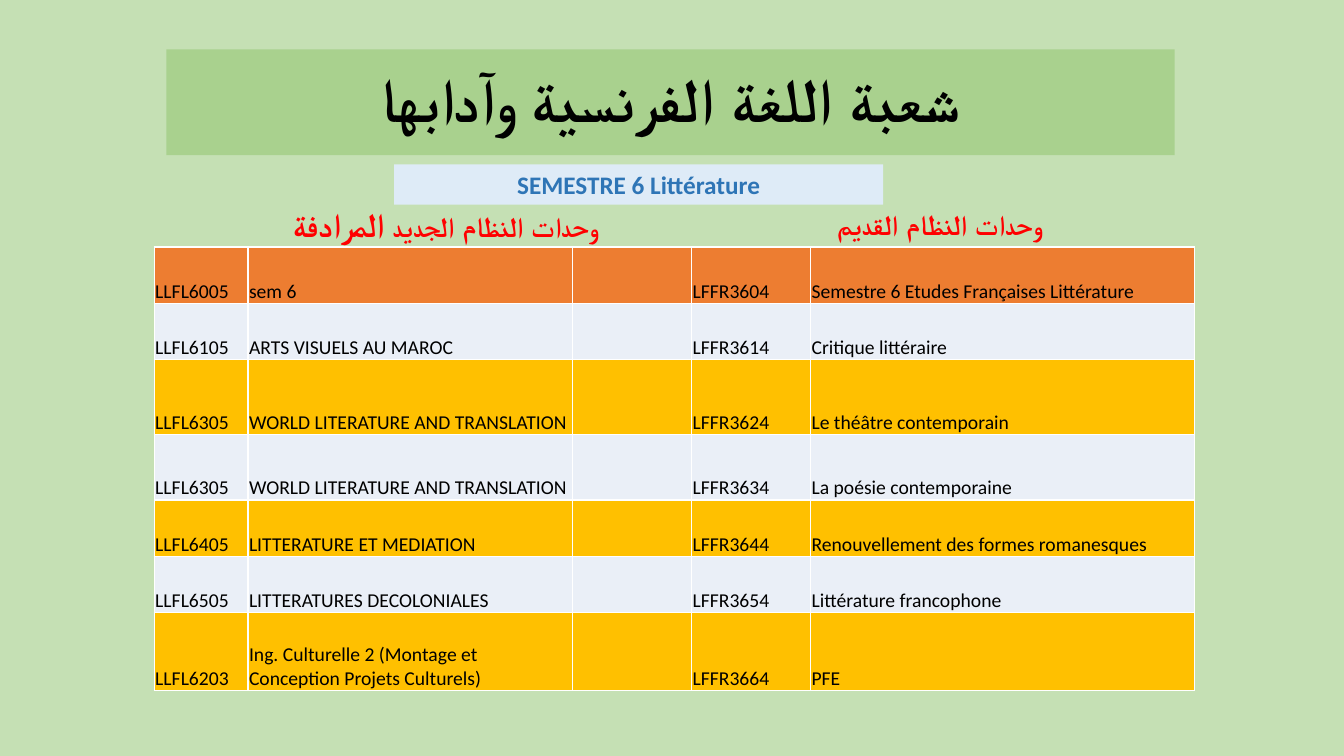
import pptx
import pptx.util
import pptx.dml.color
import pptx.enum.shapes
import pptx.enum.text
import lxml.etree
from pptx.util import Inches

COLORS = {
    "background": "C5E0B4", "banner": "A9D18E", "semester": "DEEBF7",
    "semester_text": "2E75B6", "heading": "FF0000", "text": "000000",
    "header_row": "ED7D31", "light_row": "EAEFF7", "gold_row": "FFC000",
    "border": "FFFFFF",
}


def rgb(name):
    return pptx.dml.color.RGBColor.from_string(COLORS[name])


def style_font(font, size, color, bold):
    for key, value in {"name": "Calibri", "size": pptx.util.Pt(size), "bold": bold}.items():
        setattr(font, key, value)
    font.color.rgb = rgb(color)


deck = pptx.Presentation()
deck.slide_width, deck.slide_height = Inches(13.33), Inches(7.5)
slide = deck.slides.add_slide(deck.slide_layouts[6])
slide.background.fill.solid()
slide.background.fill.fore_color.rgb = rgb("background")

# Title, column headings and semester label: place, fill, text colour, rtl, runs
labels = [
    ((1.65, 0.49, 10, 1.05), "banner", "text", True, [("شعبة اللغة الفرنسية وآدابها", 44)]),
    ((2.19, 1.97, 4.46, 0.5), None, "heading", True,
     [("وحدات النظام الجديد ", 20), ("المرادفة", 24)]),
    ((7.09, 2.01, 4.46, 0.44), None, "heading", True, [("وحدات النظام القديم", 20)]),
    ((3.91, 1.63, 4.85, 0.4), "semester", "semester_text", False,
     [("SEMESTRE 6 Littérature", 18)]),
]
for place, fill, color, right_to_left, runs in labels:
    box = [Inches(length) for length in place]
    if fill:
        label = slide.shapes.add_shape(pptx.enum.shapes.MSO_SHAPE.RECTANGLE, *box)
        label.shadow.inherit = False
        label.fill.solid()
        label.fill.fore_color.rgb = rgb(fill)
        label.line.fill.background()
    else:
        label = slide.shapes.add_textbox(*box)
    is_title = fill == "banner"
    frame = label.text_frame
    frame.word_wrap = True
    frame.vertical_anchor = (pptx.enum.text.MSO_ANCHOR.MIDDLE if is_title
                             else pptx.enum.text.MSO_ANCHOR.TOP)
    frame.auto_size = (pptx.enum.text.MSO_AUTO_SIZE.NONE if is_title
                       else pptx.enum.text.MSO_AUTO_SIZE.SHAPE_TO_FIT_TEXT)
    paragraph = frame.paragraphs[0]
    paragraph.alignment = pptx.enum.text.PP_ALIGN.CENTER
    if is_title:
        paragraph.line_spacing = 0.9
    if right_to_left:
        paragraph._p.get_or_add_pPr().set("rtl", "1")
    for text, size in runs:
        run = paragraph.add_run()
        run.text = text
        style_font(run.font, size, color, True)

# Equivalence table: new code, new module, gap, old code, old module
modules = [
    ("LLFL6005", "sem 6", "", "LFFR3604", "Semestre 6 Etudes Françaises Littérature"),
    ("LLFL6105", "ARTS VISUELS AU MAROC", "", "LFFR3614", "Critique littéraire"),
    ("LLFL6305", "WORLD LITERATURE AND TRANSLATION", "", "LFFR3624", "Le théâtre contemporain"),
    ("LLFL6305", "WORLD LITERATURE AND TRANSLATION", "", "LFFR3634", "La poésie contemporaine"),
    ("LLFL6405", "LITTERATURE ET MEDIATION", "", "LFFR3644",
     "Renouvellement des formes romanesques"),
    ("LLFL6505", "LITTERATURES DECOLONIALES", "", "LFFR3654", "Littérature francophone"),
    ("LLFL6203", "Ing. Culturelle 2 (Montage et Conception Projets Culturels)", "",
     "LFFR3664", "PFE"),
]
column_widths = [0.93, 3.22, 1.18, 1.18, 3.81]
row_heights = [0.56, 0.56, 0.74, 0.65, 0.56, 0.56, 0.77]
equivalences = slide.shapes.add_table(
    len(modules), len(column_widths), Inches(1.53), Inches(2.45),
    Inches(10.34), Inches(4.43)).table
equivalences.first_row = equivalences.horz_banding = False
for column, width in zip(equivalences.columns, column_widths):
    column.width = Inches(width)
for row, height in zip(equivalences.rows, row_heights):
    row.height = Inches(height)

cell_format = {
    "vertical_anchor": pptx.enum.text.MSO_ANCHOR.BOTTOM,
    "margin_left": Inches(0.01), "margin_top": Inches(0.01),
    "margin_right": Inches(0.01), "margin_bottom": 0,
}
namespace = "http://schemas.openxmlformats.org/drawingml/2006/main"
for r, module in enumerate(modules):
    row_color = "header_row" if r == 0 else "light_row" if r % 2 else "gold_row"
    for c, text in enumerate(module):
        cell = equivalences.cell(r, c)
        for key, value in cell_format.items():
            setattr(cell, key, value)
        cell.fill.solid()
        cell.fill.fore_color.rgb = rgb(row_color)
        cell.text = text
        paragraph = cell.text_frame.paragraphs[0]
        for run in paragraph.runs:
            style_font(run.font, 14, "text", False)
        # White borders come before the fill in the cell properties
        properties = cell._tc.get_or_add_tcPr()
        for position, side in enumerate(("lnL", "lnR", "lnT", "lnB")):
            properties.insert(position, lxml.etree.fromstring(
                f'<a:{side} xmlns:a="{namespace}" w="12700"><a:solidFill>'
                f'<a:srgbClr val="{COLORS["border"]}"/></a:solidFill></a:{side}>'))

deck.save("out.pptx")
